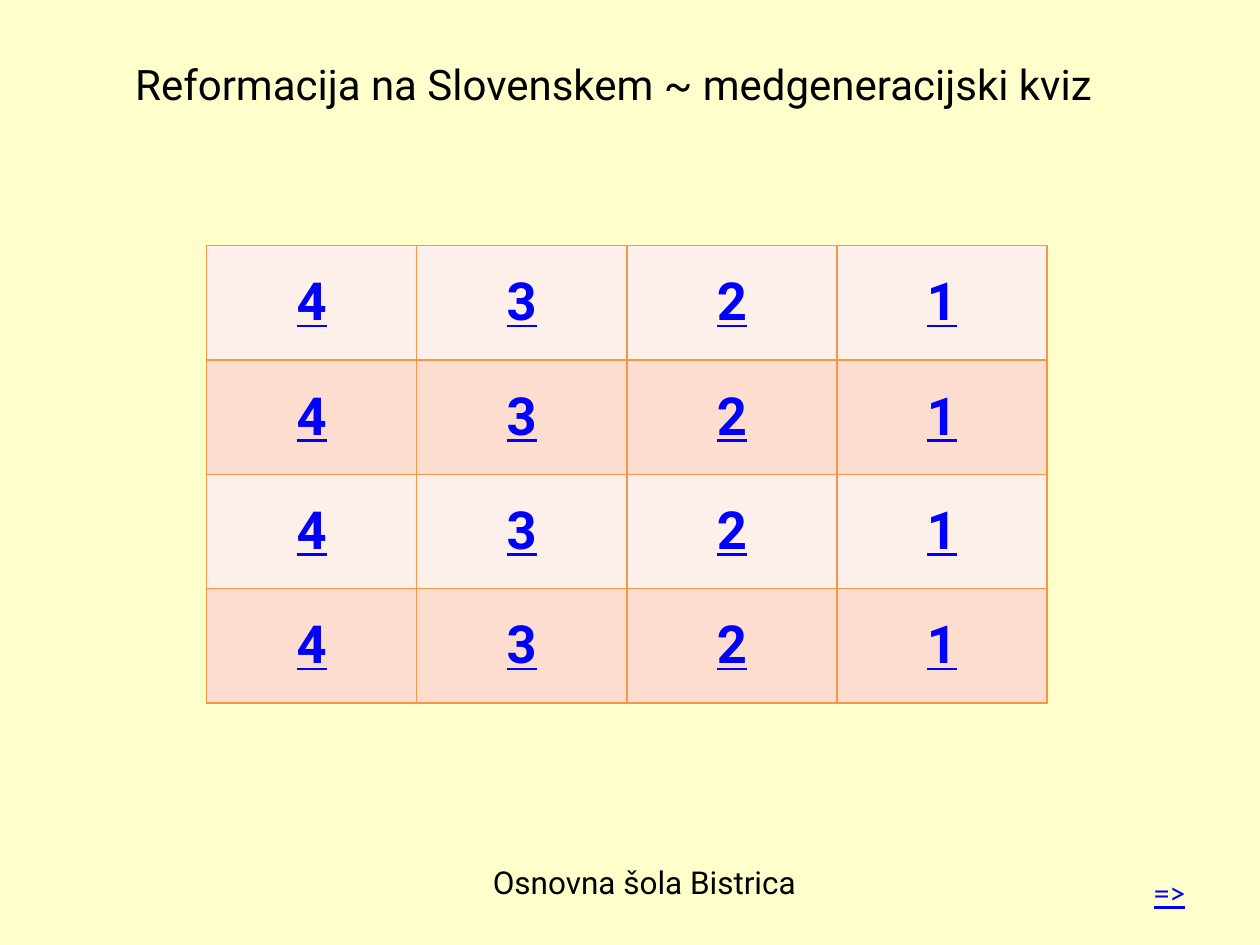
import pptx
import pptx.util
import pptx.dml.color
import pptx.enum.text
import pptx.oxml
import pptx.oxml.ns

Inches = pptx.util.Inches
ALIGN = pptx.enum.text.PP_ALIGN
MID = pptx.enum.text.MSO_ANCHOR.MIDDLE
TOP = pptx.enum.text.MSO_ANCHOR.TOP

# Content
TITLE = "Reformacija na Slovenskem ~ medgeneracijski kviz"
SCHOOL = "Osnovna šola Bistrica"
NEXT = "=>"
POINTS = ["4", "3", "2", "1"]
ROWS = 4

THEME = {
    "back": "FFFFCC", "ink": "000000", "link": "0000FF",
    "bands": ["FDEFE9", "FCDDCF"], "edge": "F79646",
    "font": "Roboto", "plain": "Calibri",
    "big": 30, "head": 24, "small": 18,
}


def rgb(code):
    return pptx.dml.color.RGBColor.from_string(code)


def write(frame, text, size=THEME["small"], color=THEME["ink"],
          font=THEME["font"], align=ALIGN.CENTER, bold=False, under=False):
    para = frame.paragraphs[0]
    para.alignment = align
    run = para.add_run()
    run.text = text
    face = run.font
    face.name, face.size = font, pptx.util.Pt(size)
    face.bold, face.underline = bold, under
    face.color.rgb = rgb(color)


def add_text(slide, box, text, anchor=TOP, **style):
    frame = slide.shapes.add_textbox(*map(Inches, box)).text_frame
    frame.word_wrap = True
    frame.vertical_anchor = anchor
    write(frame, text, **style)


def add_edge(cell):
    props = cell._tc.get_or_add_tcPr()
    space = pptx.oxml.ns.nsdecls("a")
    for spot, side in enumerate(("lnL", "lnR", "lnT", "lnB")):
        props.insert(spot, pptx.oxml.parse_xml(
            f'<a:{side} {space} w="12700"><a:solidFill>'
            f'<a:srgbClr val="{THEME["edge"]}"/></a:solidFill></a:{side}>'))


def add_board(slide, box):
    table = slide.shapes.add_table(ROWS, len(POINTS), *map(Inches, box)).table
    table.first_row = table.horz_banding = False
    for row in range(ROWS):
        for col, mark in enumerate(POINTS):
            cell = table.cell(row, col)
            cell.vertical_anchor = MID
            cell.fill.solid()
            cell.fill.fore_color.rgb = rgb(THEME["bands"][row % 2])
            write(cell.text_frame, mark, size=THEME["big"],
                  color=THEME["link"], bold=True, under=True)
            add_edge(cell)


def main():
    deck = pptx.Presentation()
    deck.slide_width, deck.slide_height = Inches(10), Inches(7.5)
    slide = deck.slides.add_slide(deck.slide_layouts[6])
    slide.background.fill.solid()
    slide.background.fill.fore_color.rgb = rgb(THEME["back"])

    # Title and school
    add_text(slide, (0.62, 0.39, 8.5, 0.55), TITLE, anchor=MID,
             size=THEME["head"])
    add_text(slide, (0.78, 6.8, 8.67, 0.4), SCHOOL)

    # Quiz board
    add_board(slide, (1.64, 1.95, 6.67, 3.63))

    # Next mark
    add_text(slide, (9.06, 6.88, 0.63, 0.4), NEXT, color=THEME["link"],
             font=THEME["plain"], align=ALIGN.LEFT, under=True)

    deck.save("out.pptx")


if __name__ == "__main__":
    main()
